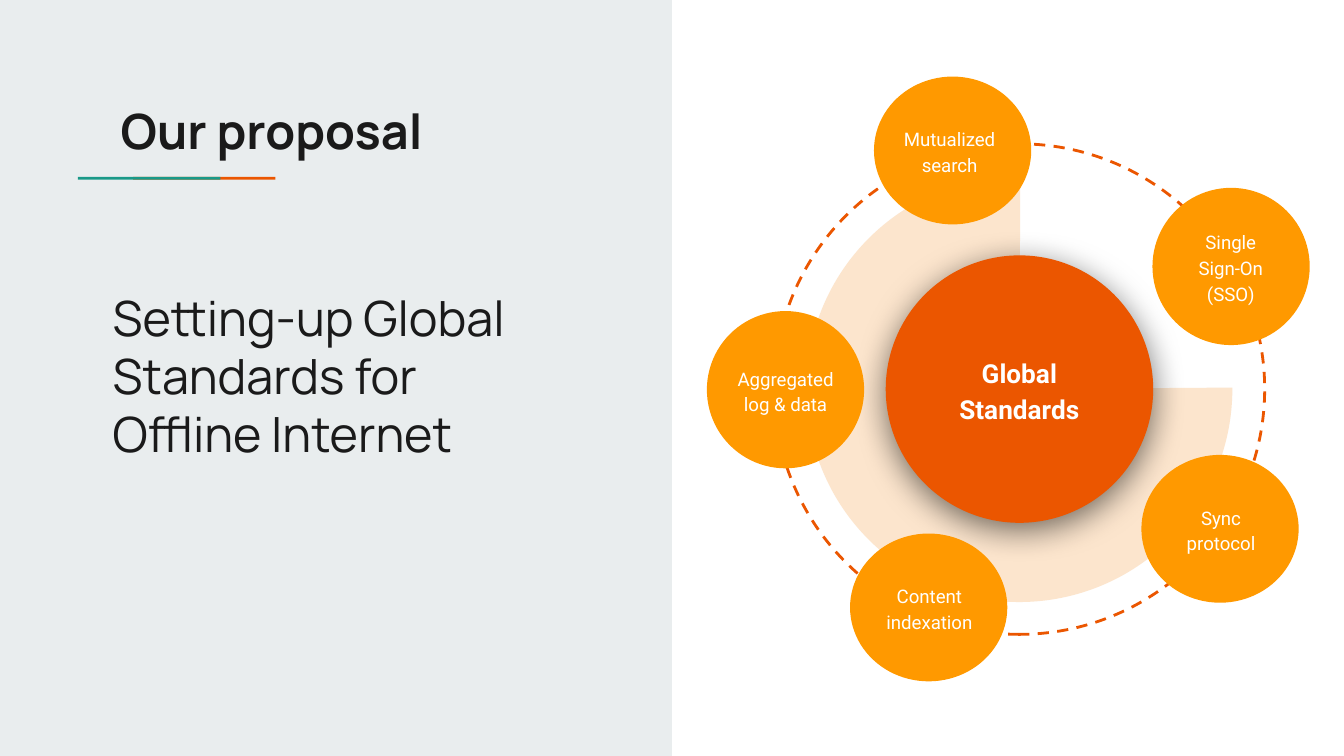
import pptx
import pptx.util
import pptx.dml.color
import pptx.enum.dml
import pptx.enum.shapes
import pptx.enum.text
import pptx.oxml

INK = {"panel": "E9EDEE", "teal": "1A9988", "deep": "EB5600", "amber": "FF9900",
       "peach": "FCE5CD", "text": "1A1A1A", "white": "FFFFFF"}
KIND = pptx.enum.shapes.MSO_SHAPE
ALIGN = pptx.enum.text.PP_ALIGN
ANCHOR = pptx.enum.text.MSO_ANCHOR
RGB = pptx.dml.color.RGBColor.from_string

# A 16:9 slide on a square grid of 100 columns
deck = pptx.Presentation()
deck.slide_width = pptx.util.Inches(10)
deck.slide_height = deck.slide_width * 9 // 16
slide = deck.slides.add_slide(deck.slide_layouts[6])
COLS, ROWS = 100, 56.25
UNIT = deck.slide_width / COLS


def draw(kind, x, y, w, h, fill=None):
    box = [round(n * UNIT) for n in (x, y, w, h)]
    shape = slide.shapes.add_shape(kind, *box)
    shape.shadow.inherit = False
    shape.line.fill.background()
    if fill:
        shape.fill.solid()
        shape.fill.fore_color.rgb = RGB(INK[fill])
    else:
        shape.fill.background()
    return shape


def write(text, x, y, w, h, size=10, font="Roboto", ink="white", bold=False,
          align=ALIGN.CENTER, anchor=ANCHOR.MIDDLE, space=1.15):
    box = slide.shapes.add_textbox(*[round(n * UNIT) for n in (x, y, w, h)])
    frame = box.text_frame
    frame.word_wrap = True
    frame.vertical_anchor = anchor
    frame.margin_left = frame.margin_right = round(UNIT)
    frame.margin_top = frame.margin_bottom = round(UNIT)
    para = frame.paragraphs[0]
    para.alignment = align
    para.line_spacing = space
    run = para.add_run()
    run.text = text
    run.font.size = pptx.util.Pt(size)
    run.font.name = font
    run.font.bold = bold
    run.font.color.rgb = RGB(INK[ink])


# Left panel with its two-colour rule
draw(KIND.RECTANGLE, 0, 0, COLS / 2, ROWS, "panel")
for x, ink in ((9.9, "deep"), (5.8, "teal")):
    draw(KIND.RECTANGLE, x, 13.17, 10.6, 0.2, ink)

# Title and statement
head = dict(size=26, font="Manrope", ink="text", align=ALIGN.LEFT,
            anchor=ANCHOR.TOP, space=1.0)
write("Our proposal", 8, 6.5, 28.9, 5.9, bold=True, **head)
write("Setting-up Global Standards for Offline Internet", 7.4, 20.43, 36.1, 18.5, **head)

# Dashed ring and three-quarter pie
ring = draw(KIND.OVAL, 57.6, 10.7, 36.5, 36.5)
ring.rotation = 270
ring.line.color.rgb = RGB(INK["deep"])
ring.line.width = pptx.util.Pt(1.5)
ring.line.dash_style = pptx.enum.dml.MSO_LINE.DASH
pie = draw(KIND.PIE, 60, 13.1, 31.7, 31.7, "peach")
pie.adjustments[0] = 215.77
pie.adjustments[1] = 162.15

# Hub with a soft shadow
hub = draw(KIND.OVAL, 65.9, 19, 19.9, 19.9, "deep")
glow = pptx.oxml.parse_xml(
    '<a:outerShdw xmlns:a="http://schemas.openxmlformats.org/drawingml/2006/main" '
    'blurRad="228600" dist="50800" dir="5400000" algn="bl" rotWithShape="0">'
    '<a:srgbClr val="000000"><a:alpha val="55000"/></a:srgbClr></a:outerShdw>')
hub._element.spPr.find(pptx.oxml.ns.qn("a:effectLst")).append(glow)
write("Global Standards", 68.5, 24.45, 14.7, 9, size=14, bold=True)

# Satellites: left, top, height, label, label left and width
WIDE = 11.7
for x, y, h, label, left, w in (
        (65.03, 5.7, 11, "Mutualized search", 65.9, 9.5),
        (63.25, 39.7, 11, "Content indexation", 64.1, 10.1),
        (52.6, 23.15, WIDE, "Aggregated log & data", 53.45, 10),
        (85.75, 13.98, WIDE, "Single Sign-On (SSO)", 87.43, 8.3),
        (84.93, 33.85, 11, "Sync protocol", 85.8, 10.1)):
    draw(KIND.OVAL, x, y, WIDE, h, "amber")
    write(label, left, y + h * 0.16, w, h * 0.68)

deck.save("out.pptx")
